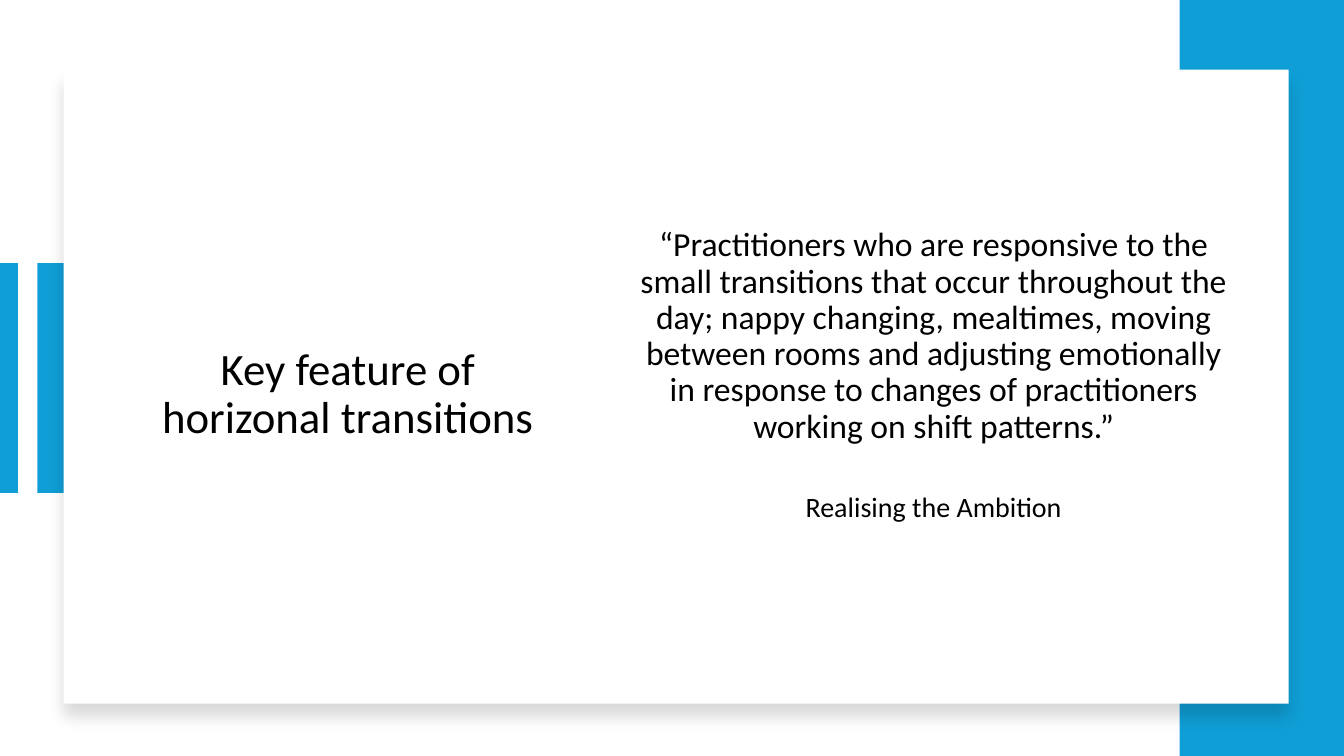
"""Builds a quotation slide about horizontal transitions."""
from dataclasses import dataclass

from lxml import etree
from pptx import Presentation
from pptx.dml.color import RGBColor
from pptx.enum import shapes, text
from pptx.oxml import ns
from pptx.util import Inches, Pt


@dataclass(frozen=True)
class Theme:
    accent: RGBColor = RGBColor(0x0F, 0x9E, 0xD5)
    card: RGBColor = RGBColor(0xFF, 0xFF, 0xFF)
    ink: RGBColor = RGBColor(0, 0, 0)
    shadow: str = "000000"
    font: str = "Calibri"
    title_size: int = 32
    quote_size: int = 24
    source_size: int = 20
    stripe_width: int = 14


THEME = Theme()


def add_block(slide, left, top, width, height, color):
    """Add a plain filled rectangle."""
    block = slide.shapes.add_shape(
        shapes.MSO_SHAPE.RECTANGLE,
        Inches(left), Inches(top), Inches(width), Inches(height))
    block.shadow.inherit = False
    block.fill.solid()
    block.fill.fore_color.rgb = color
    block.line.fill.background()
    return block


def add_soft_shadow(block):
    """Give a rectangle a soft shadow that falls downwards."""
    effects = block._element.spPr.find(ns.qn("a:effectLst"))
    shadow = etree.SubElement(
        effects, ns.qn("a:outerShdw"), blurRad=str(Pt(11)), dist=str(Pt(10)),
        dir="5400000", algn="t", rotWithShape="0")
    color = etree.SubElement(shadow, ns.qn("a:srgbClr"), val=THEME.shadow)
    etree.SubElement(color, ns.qn("a:alpha"), val="15000")


def add_stripe(slide, x, top, bottom):
    """Add a thick vertical accent line."""
    stripe = slide.shapes.add_connector(
        shapes.MSO_CONNECTOR.STRAIGHT,
        Inches(x), Inches(top), Inches(x), Inches(bottom))
    stripe.line.color.rgb = THEME.accent
    stripe.line.width = Pt(THEME.stripe_width)
    etree.SubElement(stripe._element.spPr, ns.qn("a:effectLst"))


def format_frame(frame):
    """Wrap the text and centre it vertically."""
    frame.word_wrap = True
    frame.auto_size = text.MSO_AUTO_SIZE.NONE
    frame.vertical_anchor = text.MSO_ANCHOR.MIDDLE


def write(paragraph, words, size):
    """Write one centred paragraph in the theme font."""
    paragraph.text = words
    paragraph.alignment = text.PP_ALIGN.CENTER
    paragraph.line_spacing = 0.9
    for run in paragraph.runs:
        run.font.name = THEME.font
        run.font.size = Pt(size)
        run.font.color.rgb = THEME.ink


def set_title(slide, words):
    """Place and write the slide title."""
    title = slide.shapes.title
    title.left, title.top = Inches(1.26), Inches(1.36)
    title.width, title.height = Inches(4.38), Inches(5.12)
    format_frame(title.text_frame)
    write(title.text_frame.paragraphs[0], words, THEME.title_size)


def add_quote(slide, quote, source):
    """Add the quotation with its source below."""
    box = slide.shapes.add_textbox(
        Inches(6.2), Inches(1.36), Inches(6.12), Inches(5.12))
    frame = box.text_frame
    format_frame(frame)
    frame.margin_bottom = Inches(0.44)
    write(frame.paragraphs[0], quote, THEME.quote_size)
    frame.paragraphs[0].space_after = Pt(34)
    write(frame.add_paragraph(), source, THEME.source_size)


def main():
    """Build and save the slide."""
    deck = Presentation()
    deck.slide_width, deck.slide_height = Inches(13.33), Inches(7.5)
    slide = deck.slides.add_slide(deck.slide_layouts[5])

    add_block(slide, 0.37, 2.61, 0.34, 2.28, THEME.accent)
    add_stripe(slide, 0.08, 2.61, 4.89)
    add_block(slide, 11.7, 0, 1.63, 7.5, THEME.accent)
    card = add_block(slide, 0.63, 0.69, 12.15, 6.29, THEME.card)
    add_soft_shadow(card)

    set_title(slide, "Key feature of horizonal transitions")
    slide.shapes._spTree.append(slide.shapes.title._element)
    add_quote(
        slide,
        "“Practitioners who are responsive to the small transitions that "
        "occur throughout the day; nappy changing, mealtimes, moving between "
        "rooms and adjusting emotionally in response to changes of "
        "practitioners working on shift patterns.”",
        "Realising the Ambition")
    deck.save("out.pptx")


if __name__ == "__main__":
    main()
